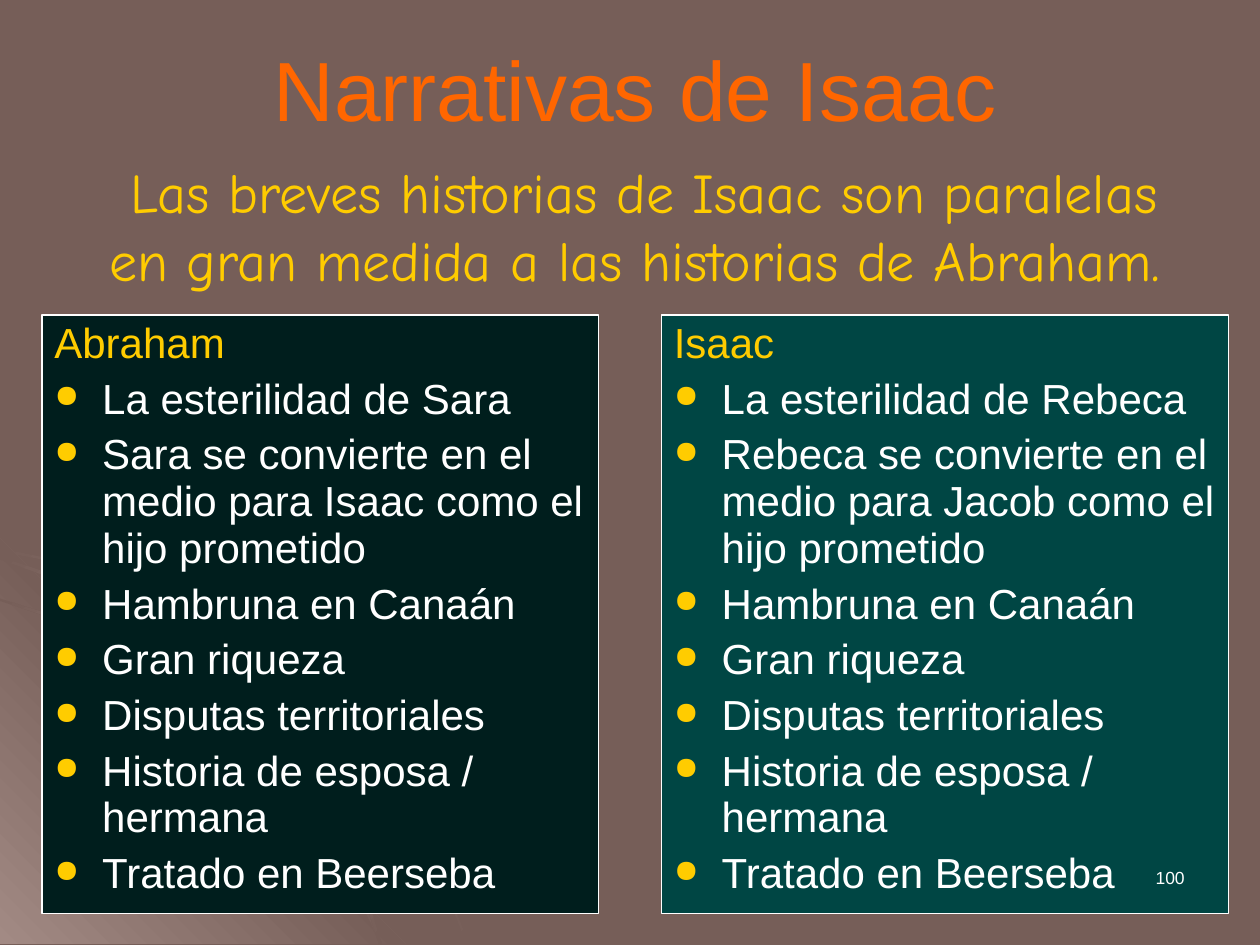
import copy

import pptx
import pptx.dml.color
import pptx.enum.shapes
import pptx.enum.text
import pptx.oxml
import pptx.oxml.ns
import pptx.util

RGBColor = pptx.dml.color.RGBColor
Pt = pptx.util.Pt
ALIGN = pptx.enum.text.PP_ALIGN
ANCHOR = pptx.enum.text.MSO_ANCHOR
qn = pptx.oxml.ns.qn

BROWN = RGBColor(0x76, 0x5E, 0x58)
LIGHT_BROWN = RGBColor(0xA2, 0x8A, 0x84)
ORANGE = RGBColor(0xFF, 0x66, 0x00)
YELLOW = RGBColor(0xFF, 0xCC, 0x00)
WHITE = RGBColor(0xFF, 0xFF, 0xFF)
DARK_TEAL = RGBColor(0x00, 0x1E, 0x1D)
TEAL = RGBColor(0x00, 0x46, 0x44)

COLUMNS, ROWS = 120, 90  # grid of the whole slide

# Corner decoration, points in hundredths of an inch
OUTER_BAND = [
    (57, 447), (28, 441), (0, 435), (0, 438), (28, 443), (56, 449), (97, 461),
    (135, 478), (173, 499), (208, 523), (241, 549), (271, 579), (298, 612),
    (323, 649), (337, 673), (350, 698), (360, 723), (370, 749), (372, 749),
    (362, 723), (352, 698), (339, 673), (325, 648), (300, 611), (272, 578),
    (242, 548), (209, 521), (174, 497), (136, 477), (98, 459)]
CORNER = [(322, 749), (0, 749), (0, 427)]
INNER_BAND = [
    (285, 714), (294, 732), (301, 749), (303, 749), (296, 730), (286, 712),
    (266, 676), (242, 640), (215, 606), (184, 576), (152, 549), (117, 526),
    (79, 505), (41, 488), (0, 475), (0, 477), (39, 490), (77, 507), (115, 528),
    (150, 551), (183, 578), (213, 608), (240, 641), (265, 677)]
MIDDLE_BAND = [
    (0, 442), (0, 444), (36, 457), (74, 475), (109, 494), (142, 518),
    (173, 544), (202, 575), (227, 605), (252, 641), (267, 667), (280, 694),
    (292, 722), (301, 749), (303, 749), (294, 720), (282, 693), (269, 665),
    (254, 639), (229, 603), (204, 573), (175, 543), (144, 516), (111, 493),
    (76, 473), (39, 455)]

SHARED_EVENTS = ["Hambruna en Canaán", "Gran riqueza", "Disputas territoriales",
                 "Historia de esposa / hermana", "Tratado en Beerseba"]


class SlideBuilder:
    """Holds the style and the current slide."""

    body_font = "Arial"
    accent_font = "Comic Neue"

    def __init__(self, deck):
        self.column = deck.slide_width / COLUMNS
        self.row = deck.slide_height / ROWS
        self.slide = deck.slides.add_slide(deck.slide_layouts[6])
        self.slide.background.fill.solid()
        self.slide.background.fill.fore_color.rgb = BROWN

    def place(self, left, top, width, height):
        return (round(left * self.column), round(top * self.row),
                round(width * self.column), round(height * self.row))

    def add_span(self, para, text, size, color, font=body_font):
        span = para.add_run()
        span.text = text
        span.font.size = Pt(size)
        span.font.name = font
        span.font.color.rgb = color

    def text_box(self, *area):
        frame = self.slide.shapes.add_textbox(*self.place(*area)).text_frame
        frame.word_wrap = True
        return frame

    def outline(self, points, edge, middle, angle):
        """Closed outline with an edge-middle-edge gradient."""
        builder = self.slide.shapes.build_freeform(
            *points[0], scale=pptx.util.Inches(0.01))
        builder.add_line_segments(points[1:], close=True)
        shape = builder.convert_to_shape()
        shape.shadow.inherit = False
        shape.line.fill.background()
        shape.fill.gradient()
        shape.fill.gradient_angle = angle
        for stop in shape.fill.gradient_stops:
            stop.color.rgb = edge
        first = next(shape._element.iter(qn("a:gs")))
        center = copy.deepcopy(first)
        center.set("pos", "50000")
        center.find(qn("a:srgbClr")).set("val", str(middle))
        first.addnext(center)

    def heading(self, title, subtitle, *area):
        frame = self.text_box(*area)
        frame.margin_top = 0
        para = frame.paragraphs[0]
        para.alignment = ALIGN.CENTER
        self.add_span(para, title, 48, ORANGE)
        para = frame.add_paragraph()
        para.alignment = ALIGN.CENTER
        para.space_before = Pt(11)
        self.add_span(para, subtitle, 32, YELLOW, self.accent_font)

    def bullet(self, para):
        properties = para._p.get_or_add_pPr()
        namespace = pptx.oxml.ns.nsdecls("a")
        for xml in (f'<a:buClr {namespace}><a:srgbClr val="{YELLOW}"/></a:buClr>',
                    f'<a:buSzPct {namespace} val="75000"/>',
                    f'<a:buChar {namespace} char="●"/>'):
            properties.append(pptx.oxml.parse_xml(xml))

    def panel(self, name, events, fill, *area):
        """Filled rectangle with a heading and a bulleted list."""
        box = self.slide.shapes.add_shape(
            pptx.enum.shapes.MSO_SHAPE.RECTANGLE, *self.place(*area))
        box.shadow.inherit = False
        box.fill.solid()
        box.fill.fore_color.rgb = fill
        box.line.color.rgb = WHITE
        box.line.width = Pt(1)
        frame = box.text_frame
        frame.word_wrap = True
        frame.vertical_anchor = ANCHOR.TOP
        indent = pptx.util.Inches(0.38)
        for index, text in enumerate([name] + events):
            para = frame.add_paragraph() if index else frame.paragraphs[0]
            para.alignment = ALIGN.LEFT
            para.line_spacing = 0.93
            para.space_before = Pt(5)
            properties = para._p.get_or_add_pPr()
            properties.set("marL", str(indent))
            properties.set("indent", str(-indent))
            if index:
                self.bullet(para)
            self.add_span(para, text, 24, WHITE if index else YELLOW)

    def page_number(self, number, *area):
        para = self.text_box(*area).paragraphs[0]
        para.alignment = ALIGN.RIGHT
        self.add_span(para, number, 10, WHITE)


def main():
    deck = pptx.Presentation()
    deck.slide_width = pptx.util.Inches(10)
    deck.slide_height = pptx.util.Inches(7.5)
    page = SlideBuilder(deck)

    # Corner decoration
    page.outline(OUTER_BAND, BROWN, LIGHT_BROWN, 315)
    page.outline(CORNER, LIGHT_BROWN, BROWN, 45)
    for band in (INNER_BAND, MIDDLE_BAND):
        page.outline(band, BROWN, LIGHT_BROWN, 315)

    # Title and statement
    page.heading("Narrativas de Isaac",
                 " Las breves historias de Isaac son paralelas en gran medida "
                 "a las historias de Abraham.", 6, 3.6, 109, 28.3)

    # Parallel stories
    page.panel("Abraham",
               ["La esterilidad de Sara",
                "Sara se convierte en el medio para Isaac como el hijo prometido"]
               + SHARED_EVENTS, DARK_TEAL, 4, 30, 53, 57)
    page.panel("Isaac",
               ["La esterilidad de Rebeca",
                "Rebeca se convierte en el medio para Jacob como el hijo prometido"]
               + SHARED_EVENTS, TEAL, 63, 30, 54, 57)

    page.page_number("100", 86, 82, 28, 6)
    deck.save("out.pptx")


if __name__ == "__main__":
    main()
